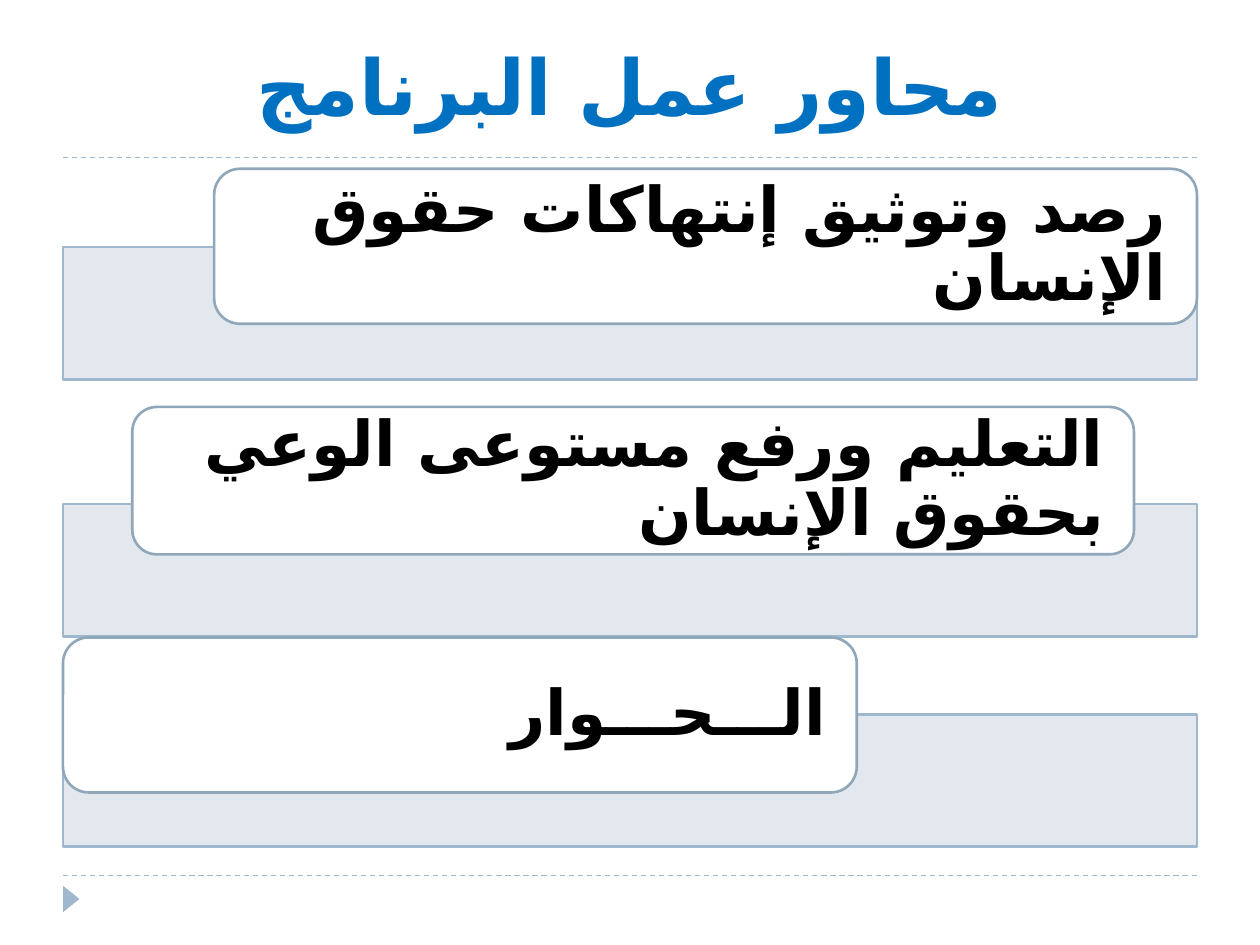
import pptx
import pptx.util
import pptx.dml.color
import pptx.enum.dml
import pptx.enum.shapes
import pptx.enum.text
import lxml.etree
from dataclasses import dataclass
from pptx.util import Inches, Pt
from pptx.oxml.ns import qn


@dataclass(frozen=True)
class Theme:
    title: str = "0070C0"
    text: str = "000000"
    paper: str = "FFFFFF"
    band: str = "DFE6ED"
    edge: str = "9FB8CD"
    rim: str = "90A7BA"
    head: int = 44
    body: int = 36
    face: str = "TeX Gyre Bonum"
    font: str = "DejaVu Sans"


theme = Theme()
rgb = pptx.dml.color.RGBColor.from_string
kind = pptx.enum.shapes.MSO_SHAPE
align = pptx.enum.text.PP_ALIGN
anchor = pptx.enum.text.MSO_ANCHOR


def add_box(form, left, top, width, height, fill, line=None):
    box = slide.shapes.add_shape(
        form, Inches(left), Inches(top), Inches(width), Inches(height))
    box.shadow.inherit = False
    box.fill.solid()
    box.fill.fore_color.rgb = rgb(fill)
    if line:
        box.line.color.rgb = rgb(line)
        box.line.width = Pt(1.5)
    else:
        box.line.fill.background()
    return box


def set_text(frame, text, face, size, color, side):
    frame.text = text
    frame.word_wrap = True
    para = frame.paragraphs[0]
    para.alignment = side
    para.font.name = face
    para.font.size = Pt(size)
    para.font.bold = True
    para.font.color.rgb = rgb(color)
    props = para._p.get_or_add_pPr()
    props.set("rtl", "1")
    lxml.etree.SubElement(
        props.find(qn("a:defRPr")), qn("a:cs"), typeface=theme.font)
    return para


deck = pptx.Presentation()
deck.slide_width, deck.slide_height = Inches(10), Inches(7.5)
slide = deck.slides.add_slide(deck.slide_layouts[5])

for y in (6.95, 1.25):
    rule = slide.shapes.add_connector(
        pptx.enum.shapes.MSO_CONNECTOR.STRAIGHT,
        Inches(0.5), Inches(y), Inches(9.5), Inches(y))
    rule.line.color.rgb = rgb(theme.edge)
    rule.line.width = Pt(0.75)
    rule.line.dash_style = pptx.enum.dml.MSO_LINE.DASH
    lxml.etree.SubElement(rule._element.spPr, qn("a:effectLst"))

mark = add_box(kind.ISOSCELES_TRIANGLE, 0.46, 7.07, 0.21, 0.13, theme.edge)
mark.rotation = 90

title = slide.shapes.title
title.left, title.top = Inches(0.5), Inches(0.17)
title.width, title.height = Inches(9), Inches(0.92)
title.text_frame.vertical_anchor = anchor.BOTTOM
set_text(title.text_frame, "محاور عمل البرنامج",
         theme.face, theme.head, theme.title, align.CENTER)

topics = [
    ("رصد وتوثيق إنتهاكات حقوق الإنسان", 1.96, (1.7, 1.34, 7.8, 1.23)),
    ("التعليم ورفع مستوعى الوعي بحقوق الإنسان", 4, (1.05, 3.23, 7.95, 1.17)),
    ("الـــحـــوار", 5.67, (0.5, 5.06, 6.3, 1.23)),
]
for text, top, place in topics:
    band = add_box(kind.RECTANGLE, 0.5, top, 9, 1.05, theme.band, theme.edge)
    tint = band._element.spPr.find(qn("a:solidFill"))[0]
    lxml.etree.SubElement(tint, qn("a:alpha"), val="90000")

    card = add_box(kind.ROUNDED_RECTANGLE, *place, theme.paper, theme.rim)
    frame = card.text_frame
    frame.margin_left = frame.margin_right = Inches(0.18)
    frame.margin_top = frame.margin_bottom = 0
    frame.vertical_anchor = anchor.MIDDLE
    para = set_text(frame, text, theme.font, theme.body, theme.text, align.RIGHT)
    para.line_spacing = 0.9

deck.save("out.pptx")
